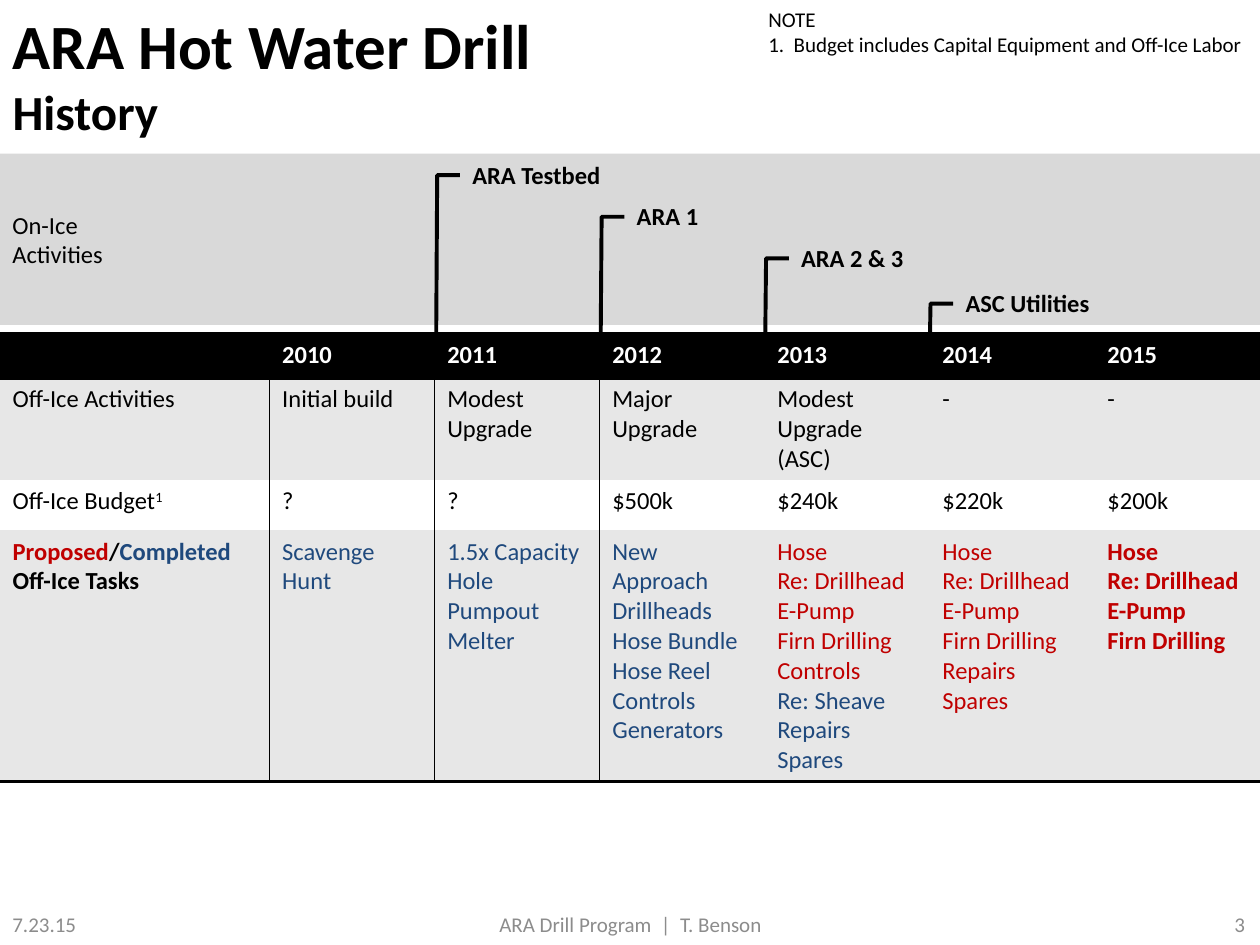
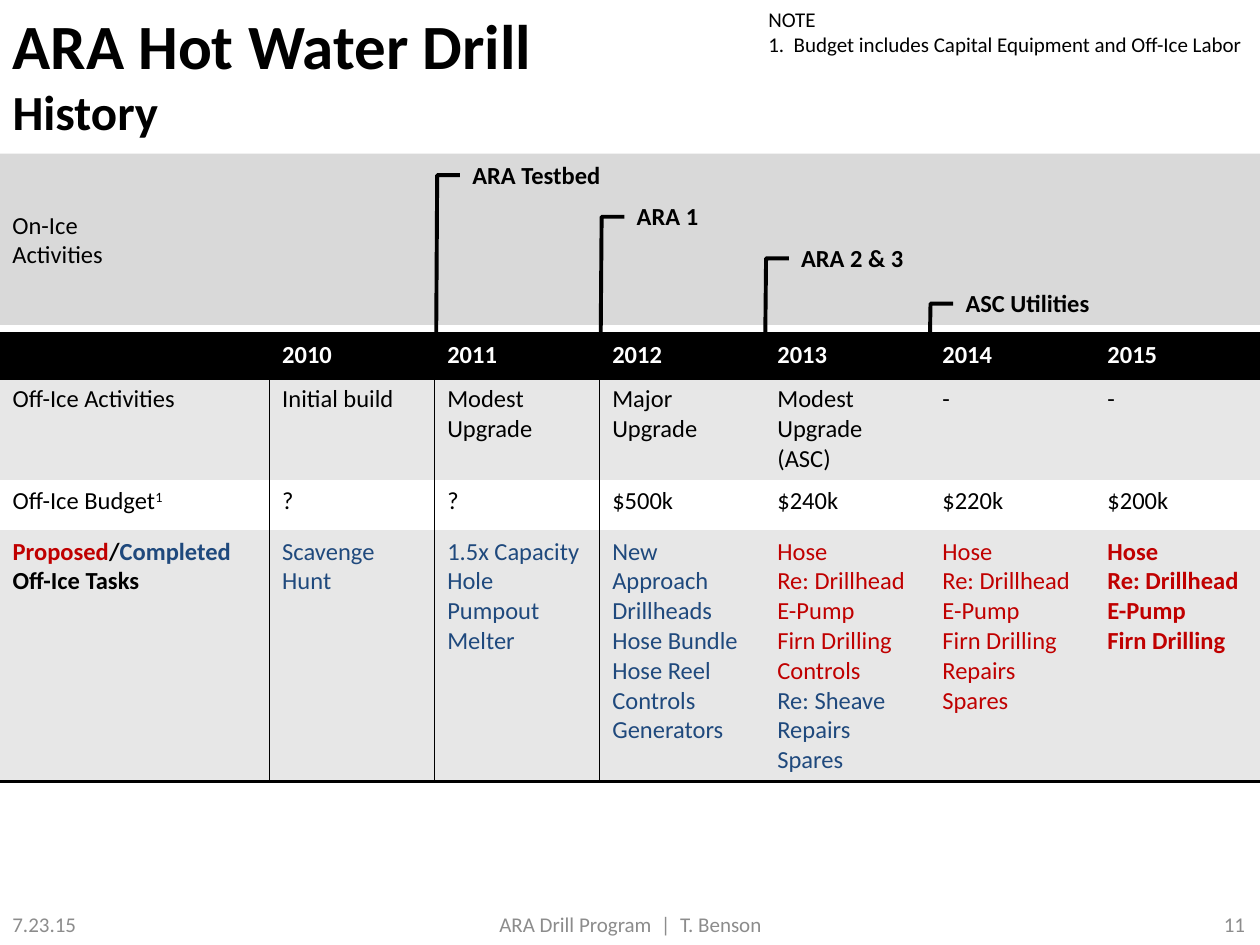
"""Build the two history slides of the hot water drill programme."""
import lxml.etree
import pptx
import pptx.dml.color
import pptx.enum.shapes
import pptx.enum.text
import pptx.oxml.ns
import pptx.util

Inches = pptx.util.Inches
RGBColor = pptx.dml.color.RGBColor
ALIGN = pptx.enum.text.PP_ALIGN
ANCHOR = pptx.enum.text.MSO_ANCHOR

BLACK = RGBColor(0x00, 0x00, 0x00)
WHITE = RGBColor(0xFF, 0xFF, 0xFF)
BAND_GRAY = RGBColor(0xD9, 0xD9, 0xD9)
ROW_GRAY = RGBColor(0xE7, 0xE7, 0xE7)
FOOTER_GRAY = RGBColor(0x8C, 0x8C, 0x8C)
PROPOSED = RGBColor(0xC0, 0x00, 0x00)
COMPLETED = RGBColor(0x1F, 0x49, 0x7D)
FONT = "Calibri"
NO_GRID_STYLE = "{2D5ABB26-0587-4C30-8999-92F81FD0307C}"

PAGE_NUMBERS = ["3", "11"]
TITLE = [[("ARA Hot Water Drill\v", {"size": 36}), ("History", {"size": 28})]]
NOTE = ["NOTE", "1.  Budget includes Capital Equipment and Off-Ice Labor"]
ON_ICE = ["On-Ice", "Activities"]
MILESTONES = [("ARA Testbed", 1.22), ("ARA 1", 1.55), ("ARA 2 & 3", 1.88), ("ASC Utilities", 2.24)]
FOOTER = ("7.23.15", "ARA Drill Program  |  T. Benson")


def tasks(*names, color=COMPLETED, bold=False):
    """Return one paragraph per task in the colour of its status."""
    return [[(name, {"color": color, "bold": bold})] for name in names]


REPEATED_TASKS = ("Hose", "Re: Drillhead", "E-Pump", "Firn Drilling")
TASK_LABEL = [[("Proposed", {"color": PROPOSED}), ("/", {}),
               ("Completed ", {"color": COMPLETED}), ("Off-Ice Tasks", {})]]
HISTORY = [
    ["", "2010", "2011", "2012", "2013", "2014", "2015"],
    ["Off-Ice Activities", "Initial build", "Modest Upgrade", "Major Upgrade",
     "Modest Upgrade (ASC)", "-", "-"],
    [[[("Off-Ice Budget", {}), ("1", {"baseline": 30})]],
     "?", "?", "$500k", "$240k", "$220k", "$200k"],
    [[[(text, {"bold": True, **style}) for text, style in TASK_LABEL[0]]],
     tasks("Scavenge Hunt"),
     tasks("1.5x Capacity", "Hole Pumpout", "Melter"),
     tasks("New Approach", "Drillheads", "Hose Bundle", "Hose Reel", "Controls", "Generators"),
     tasks(*REPEATED_TASKS, "Controls", color=PROPOSED) + tasks("Re: Sheave", "Repairs", "Spares"),
     tasks(*REPEATED_TASKS, "Repairs", "Spares", color=PROPOSED),
     tasks(*REPEATED_TASKS, color=PROPOSED, bold=True)],
]
ROW_FILLS = [BLACK, ROW_GRAY, WHITE, ROW_GRAY]
ROW_HEIGHTS = [0.35, 0.81, 0.4, 1.99]
LABEL_WIDTH, YEAR_WIDTH = 2.14, 1.31
TABLE_TOP = 2.65
FIRST_BRACKET, BRACKET_WIDTH, BRACKET_FOOT = 3.46, 0.19, 3.0


def write_text(frame, content, size=14, color=BLACK, bold=False, align=ALIGN.LEFT,
               anchor=ANCHOR.TOP, wrap=True):
    """Fill a text frame with paragraphs, each a string or a list of styled runs."""
    frame.word_wrap = wrap
    frame.vertical_anchor = anchor
    for index, runs in enumerate([content] if isinstance(content, str) else content):
        paragraph = frame.add_paragraph() if index else frame.paragraphs[0]
        paragraph.alignment = align
        if not runs:
            end = lxml.etree.SubElement(paragraph._p, pptx.oxml.ns.qn("a:endParaRPr"))
            end.set("sz", str(size * 100))
            continue
        for text, style in [(runs, {})] if isinstance(runs, str) else runs:
            for part_index, part in enumerate(text.split("\v")):
                if part_index:
                    paragraph.add_line_break()
                if not part:
                    continue
                run = paragraph.add_run()
                run.text = part
                run.font.name = FONT
                run.font.size = pptx.util.Pt(style.get("size", size))
                run.font.bold = style.get("bold", bold)
                run.font.color.rgb = style.get("color", color)
                if "baseline" in style:
                    run.font._element.set("baseline", str(style["baseline"] * 1000))


def add_text(slide, box, content, **style):
    """Add a text box at left, top, width, height in inches."""
    frame = slide.shapes.add_textbox(*map(Inches, box)).text_frame
    write_text(frame, content, **style)


def set_borders(cell, borders):
    """Draw black cell borders, given as side letter and width in points."""
    properties = cell._tc.get_or_add_tcPr()
    for side in "LRTB":
        if side in borders:
            line = lxml.etree.SubElement(properties, pptx.oxml.ns.qn(f"a:ln{side}"))
            line.set("w", str(pptx.util.Pt(borders[side])))
            fill = lxml.etree.SubElement(line, pptx.oxml.ns.qn("a:solidFill"))
            lxml.etree.SubElement(fill, pptx.oxml.ns.qn("a:srgbClr")).set("val", str(BLACK))


def add_title(slide):
    """Place the two-line title."""
    title = slide.shapes.title
    title.left, title.top, title.width, title.height = map(Inches, (0, 0, 10, 1.21))
    title.text_frame.auto_size = pptx.enum.text.MSO_AUTO_SIZE.NONE
    write_text(title.text_frame, TITLE, bold=True)


def add_on_ice_band(slide):
    """Add the gray band for on-ice activities."""
    band = slide.shapes.add_shape(pptx.enum.shapes.MSO_SHAPE.RECTANGLE,
                                  *map(Inches, (0, 1.22, 10, 1.36)))
    band.shadow.inherit = False
    band.fill.solid()
    band.fill.fore_color.rgb = BAND_GRAY
    band.line.fill.background()
    write_text(band.text_frame, ON_ICE, anchor=ANCHOR.MIDDLE)


def add_history(slide):
    """Add the table of off-ice work by year."""
    rows, columns = len(HISTORY), len(HISTORY[0])
    frame = slide.shapes.add_table(rows, columns, 0, Inches(TABLE_TOP),
                                   Inches(10), Inches(sum(ROW_HEIGHTS)))
    table = frame.table
    table.first_row = table.horz_banding = False
    table._tbl.tblPr.find(pptx.oxml.ns.qn("a:tableStyleId")).text = NO_GRID_STYLE
    for index, column in enumerate(table.columns):
        column.width = Inches(YEAR_WIDTH if index else LABEL_WIDTH)
    for r, contents in enumerate(HISTORY):
        table.rows[r].height = Inches(ROW_HEIGHTS[r])
        header = r == 0
        for c, content in enumerate(contents):
            cell = table.cell(r, c)
            borders = {"T": 2, "B": 2} if header else {}
            if r == rows - 1:
                borders["B"] = 2
            if not header and c < 2:
                borders["R"] = 1
            if not header and c in (1, 2):
                borders["L"] = 1
            set_borders(cell, borders)
            cell.fill.solid()
            cell.fill.fore_color.rgb = ROW_FILLS[r]
            write_text(cell.text_frame, content, color=WHITE if header else BLACK, bold=header)


def add_milestones(slide):
    """Add each on-ice milestone with its bracket down to the year row."""
    for index, (milestone, top) in enumerate(MILESTONES):
        foot = FIRST_BRACKET + index * (YEAR_WIDTH - 0.005)
        tip, level = foot + BRACKET_WIDTH, top + 0.17
        add_text(slide, (tip, top, 1.23, 0.34), milestone, bold=True, wrap=False)
        builder = slide.shapes.build_freeform(Inches(foot), Inches(BRACKET_FOOT))
        builder.add_line_segments([(Inches(foot + 0.01), Inches(level)),
                                   (Inches(tip), Inches(level))], close=False)
        bracket = builder.convert_to_shape()
        bracket.shadow.inherit = False
        bracket.fill.background()
        bracket.line.color.rgb = BLACK
        bracket.line.width = pptx.util.Pt(2.25)


def add_footer(slide, page_number):
    """Add date, programme and page number."""
    date, programme = FOOTER
    for text, left, width, align in ((date, 0, 2.33, ALIGN.LEFT),
                                     (programme, 3.42, 3.17, ALIGN.CENTER),
                                     (page_number, 7.65, 2.33, ALIGN.RIGHT)):
        add_text(slide, (left, 7.17, width, 0.33), text, size=12, color=FOOTER_GRAY,
                 align=align, anchor=ANCHOR.MIDDLE)


def main():
    """Build and save the deck."""
    deck = pptx.Presentation()
    deck.slide_width, deck.slide_height = Inches(10), Inches(7.5)
    for page_number in PAGE_NUMBERS:
        slide = deck.slides.add_slide(deck.slide_layouts[5])
        add_on_ice_band(slide)
        add_title(slide)
        add_history(slide)
        add_footer(slide, page_number)
        add_text(slide, (6, 0, 4, 0.5), NOTE, size=12, wrap=False)
        add_milestones(slide)
    deck.save("out.pptx")


if __name__ == "__main__":
    main()
